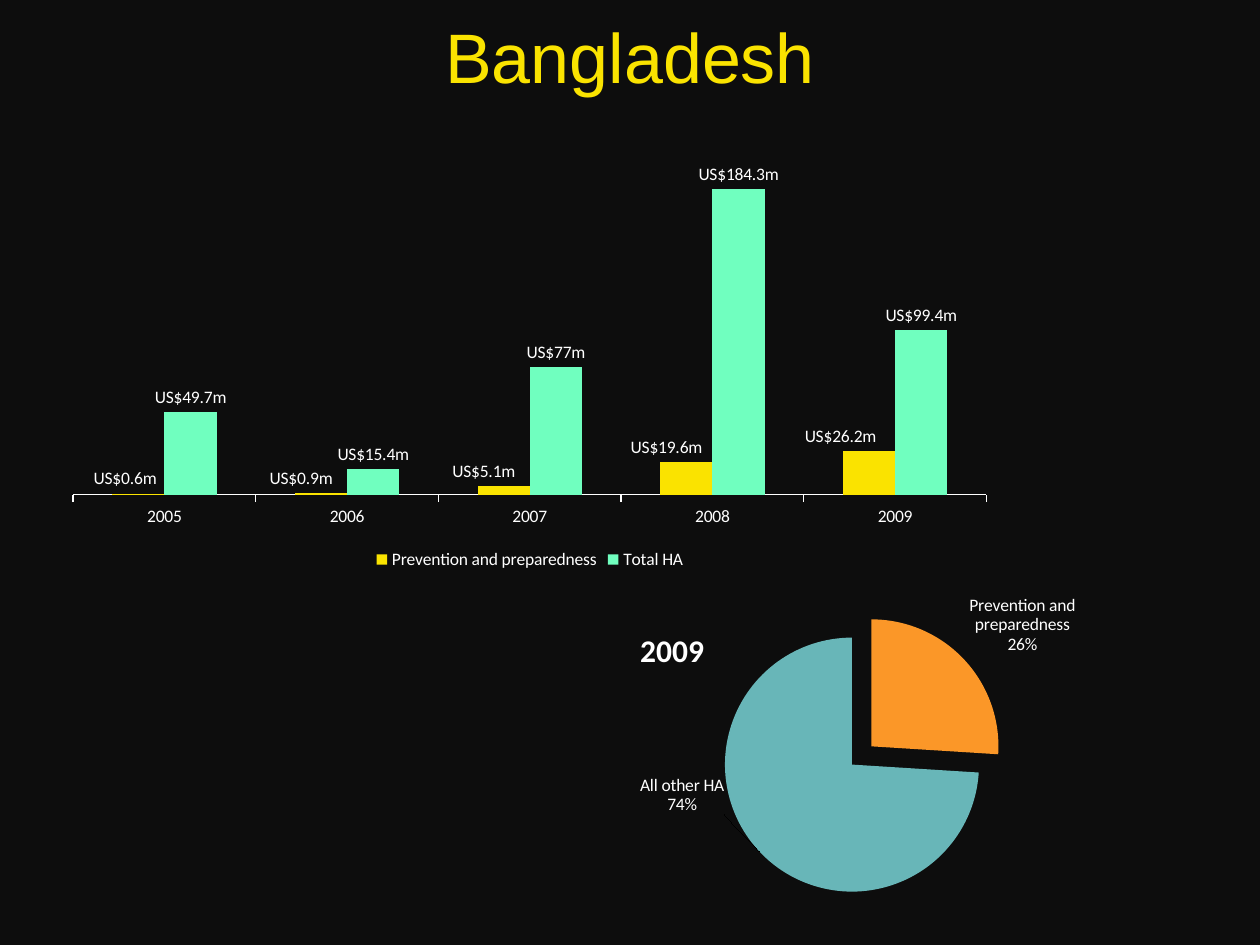
import pptx
import pptx.chart.data
import pptx.dml.color
import pptx.enum.chart
import pptx.enum.text
import pptx.oxml
import pptx.oxml.ns
import pptx.util
from pptx.util import Cm

THEME = {
    "background": "0D0D0D", "text": "FFFFFF", "title": "FAE300",
    "prevention": "FAE300", "total": "70FFBF", "slices": ("FB9728", "68B6B8"),
    "title_font": "Arial", "chart_font": "Calibri",
    "title_size": 40, "chart_size": 10, "pie_title_size": 18,
}
TITLE = "Bangladesh"
YEARS = ("2005", "2006", "2007", "2008", "2009")
FUNDING = (
    ("Prevention and preparedness", (0.6, 0.9, 5.1, 19.6, 26.2), THEME["prevention"]),
    ("Total HA", (49.7, 15.4, 77, 184.3, 99.4), THEME["total"]),
)
MONEY = '"US$"General"m"'
PREVENTION_LABEL_SHIFTS = (-0.014, -0.021, -0.021, -0.021, -0.03)
SHARES = (("Prevention and preparedness", 26), ("All other HA", 74))
SHARE_YEAR = "2009"
EXPLOSION = 21


def rgb(value):
    return pptx.dml.color.RGBColor.from_string(value)


def fill(fmt, color):
    fmt.fill.solid()
    fmt.fill.fore_color.rgb = rgb(color)


def style_font(font, name, size, color, bold=False):
    font.name = name
    font.size = pptx.util.Pt(size)
    font.color.rgb = rgb(color)
    font.bold = bold


def layout(x, y, w=None, h=None, inner=False, edge=False):
    parts = ['<c:layoutTarget val="inner"/>'] if inner else []
    if edge:
        parts += ['<c:xMode val="edge"/>', '<c:yMode val="edge"/>']
    parts += [f'<c:{tag} val="{val}"/>' for tag, val in zip("xywh", (x, y, w, h)) if val is not None]
    return pptx.oxml.parse_xml(
        f'<c:layout {pptx.oxml.ns.nsdecls("c")}><c:manualLayout>{"".join(parts)}'
        '</c:manualLayout></c:layout>')


def place_plot(chart, *box):
    area = chart.plots[0]._element.getparent()
    for old in area.findall(pptx.oxml.ns.qn("c:layout")):
        area.remove(old)
    area.insert(0, layout(*box, inner=True, edge=True))


def shift_label(series, index, x, y):
    label = series.points[index].data_label
    label.position = pptx.enum.chart.XL_LABEL_POSITION.OUTSIDE_END
    element = series._element.xpath(f'c:dLbls/c:dLbl[c:idx/@val="{index}"]')[0]
    element.insert(1, layout(x, y))
    return element


def add_chart(s, kind, data, box):
    chart = s.shapes.add_chart(kind, *(Cm(v) for v in box), data).chart
    style_font(chart.font, THEME["chart_font"], THEME["chart_size"], THEME["text"])
    return chart


def add_funding_chart(s):
    data = pptx.chart.data.CategoryChartData(number_format=MONEY)
    data.categories = YEARS
    for name, values, _ in FUNDING:
        data.add_series(name, values)
    chart = add_chart(s, pptx.enum.chart.XL_CHART_TYPE.COLUMN_CLUSTERED, data,
                      (1.09, 3.12, 19.18, 8.46))
    chart.has_title = False
    chart.has_legend = True
    chart.legend.position = pptx.enum.chart.XL_LEGEND_POSITION.BOTTOM
    chart.legend.include_in_layout = False
    place_plot(chart, 0.02, 0.02, 0.96, 0.79)

    values_axis = chart.value_axis
    values_axis.visible = False
    values_axis.has_major_gridlines = False
    values_axis.minimum_scale, values_axis.maximum_scale = 0, 200
    years_axis = chart.category_axis
    years_axis.format.line.color.rgb = rgb(THEME["text"])
    years_axis.major_tick_mark = pptx.enum.chart.XL_TICK_MARK.OUTSIDE

    plot = chart.plots[0]
    plot.gap_width, plot.overlap = 150, 0
    plot.vary_by_categories = False
    for series, (_, _, color) in zip(plot.series, FUNDING):
        fill(series.format, color)
        labels = series.data_labels
        labels.show_value = True
        labels.number_format = MONEY
        labels.number_format_is_linked = False
        labels.position = pptx.enum.chart.XL_LABEL_POSITION.OUTSIDE_END
    prevention = plot.series[0]
    for index, shift in enumerate(PREVENTION_LABEL_SHIFTS):
        label = shift_label(prevention, index, shift, 0)
        number = pptx.oxml.parse_xml(f'<c:numFmt {pptx.oxml.ns.nsdecls("c")} sourceLinked="0"/>')
        number.set("formatCode", MONEY)
        label.insert(2, number)


def add_share_chart(s):
    data = pptx.chart.data.CategoryChartData()
    data.categories = [name for name, _ in SHARES]
    data.add_series("Series 1", [value for _, value in SHARES])
    chart = add_chart(s, pptx.enum.chart.XL_CHART_TYPE.PIE, data, (11.1, 11.53, 12.09, 6.83))
    chart.has_legend = False
    tf = chart.chart_title.text_frame
    tf.text = SHARE_YEAR
    style_font(tf.paragraphs[0].runs[0].font, THEME["chart_font"],
               THEME["pie_title_size"], THEME["text"], True)
    title = chart.chart_title._element
    for old in title.findall(pptx.oxml.ns.qn("c:layout")):
        title.remove(old)
    title.insert(1, layout(0.14, 0.15, edge=True))
    place_plot(chart, 0.31, 0.14, 0.45, 0.75)

    series = chart.plots[0].series[0]
    for index, color in enumerate(THEME["slices"]):
        fill(series.points[index].format, color)
    other = series._element.xpath('c:dPt[c:idx/@val="1"]')[0]
    explosion = pptx.oxml.parse_xml(
        f'<c:explosion {pptx.oxml.ns.nsdecls("c")} val="{EXPLOSION}"/>')
    other.find(pptx.oxml.ns.qn("c:spPr")).addprevious(explosion)

    labels = series.data_labels
    labels.show_value = False
    labels.show_category_name = labels.show_percentage = True
    labels.position = pptx.enum.chart.XL_LABEL_POSITION.OUTSIDE_END
    shifted = shift_label(series, 1, -0.05, -0.24)
    for tag, shown in (("showVal", 0), ("showCatName", 1), ("showPercent", 1)):
        shifted.find(pptx.oxml.ns.qn(f"c:{tag}")).set("val", str(shown))
    for element in (labels._element, shifted):
        separator = pptx.oxml.parse_xml(
            f'<c:separator {pptx.oxml.ns.nsdecls("c")}>\n</c:separator>')
        last = element.xpath("c:showBubbleSize | c:showPercent")[-1]
        last.addnext(separator)


def add_title(s):
    sp = s.shapes.add_textbox(Cm(0), Cm(0), Cm(25.4), Cm(1.78))
    tf = sp.text_frame
    tf.word_wrap = True
    tf.margin_top = Cm(0.27)
    tf.vertical_anchor = pptx.enum.text.MSO_ANCHOR.TOP
    tf.text = TITLE
    p = tf.paragraphs[0]
    p.alignment = pptx.enum.text.PP_ALIGN.CENTER
    style_font(p.runs[0].font, THEME["title_font"], THEME["title_size"], THEME["title"])


def main():
    prs = pptx.Presentation()
    prs.slide_width, prs.slide_height = Cm(25.4), Cm(19.05)
    s = prs.slides.add_slide(prs.slide_layouts[6])
    fill(s.background, THEME["background"])
    add_funding_chart(s)
    add_share_chart(s)
    add_title(s)
    prs.save("out.pptx")


if __name__ == "__main__":
    main()
